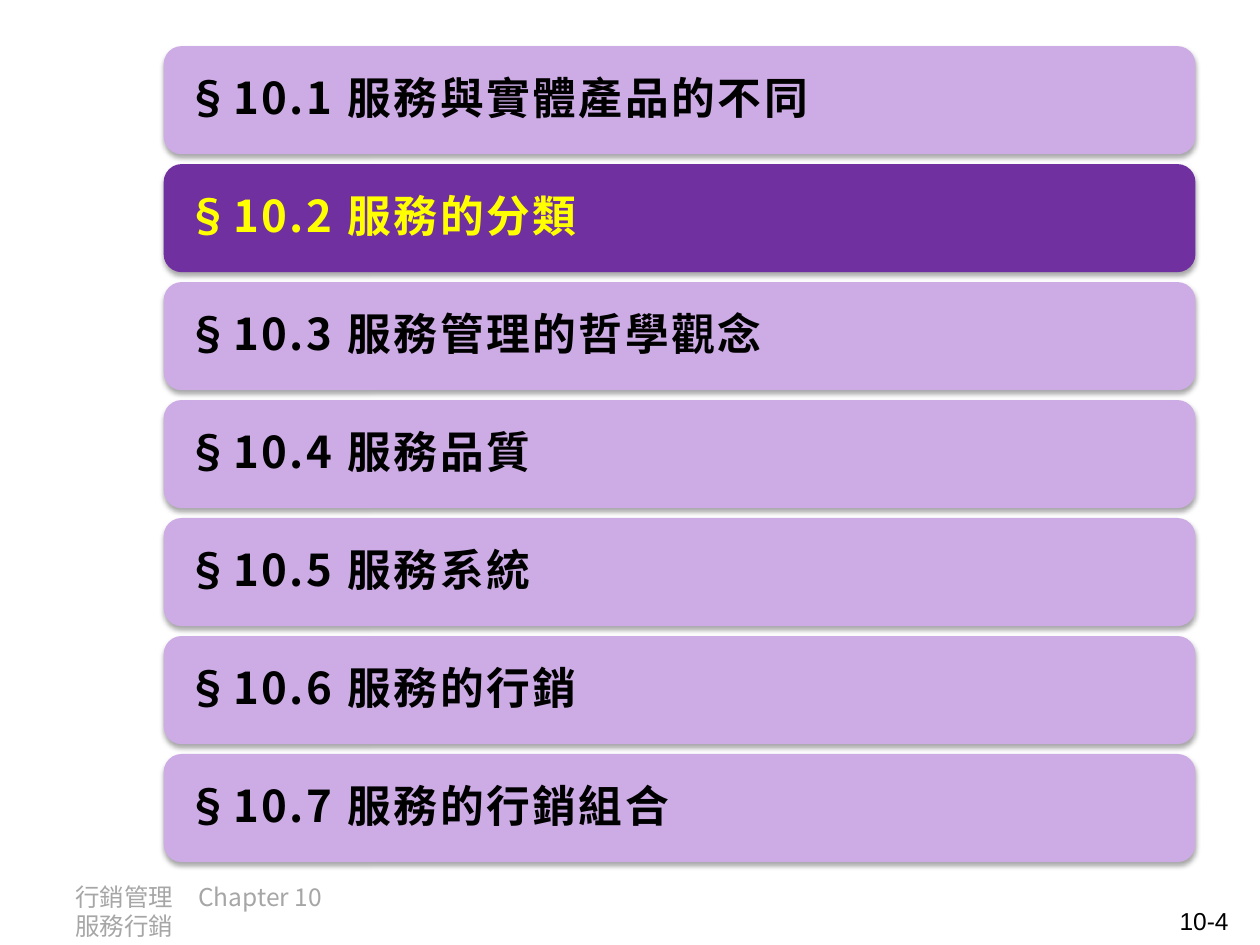
from dataclasses import dataclass

from lxml import etree
from pptx import Presentation
from pptx import util as u
from pptx.dml.color import RGBColor
from pptx.enum import shapes, text
from pptx.oxml import ns


@dataclass(frozen=True)
class Theme:
    bar: str = "CDACE6"
    bar_current: str = "7030A0"
    ink: str = "000000"
    ink_current: str = "FFFF00"
    footer: str = "A6A6A6"
    latin: str = "Arial"
    cjk: str = "Noto Sans CJK SC"
    section_size: float = 25
    footer_size: float = 14


THEME = Theme()
SECTIONS = [
    "服務與實體產品的不同",
    "服務的分類",
    "服務管理的哲學觀念",
    "服務品質",
    "服務系統",
    "服務的行銷",
    "服務的行銷組合",
]
CURRENT = 2


def apply(target, values):
    for name, value in values.items():
        setattr(target, name, value)


def add_span(para, words, latin, size, color, bold=False, spacing=0):
    span = para.add_run()
    span.text = words
    apply(span.font, {"name": latin, "size": u.Pt(size), "bold": bold})
    span.font.color.rgb = RGBColor.from_string(color)
    props = span.font._element
    if spacing:
        props.set("spc", str(int(spacing * 100)))
    east_asian = etree.SubElement(props, ns.qn("a:ea"))
    east_asian.set("typeface", THEME.cjk)


def add_soft_shadow(shape):
    shape.shadow.inherit = False
    effects = shape._element.spPr.find(ns.qn("a:effectLst"))
    shadow = etree.SubElement(effects, ns.qn("a:outerShdw"))
    for name, value in {
        "blurRad": u.Pt(3.1), "dist": u.Pt(1.8), "dir": 90 * 60000, "rotWithShape": 0,
    }.items():
        shadow.set(name, str(int(value)))
    color = etree.SubElement(shadow, ns.qn("a:srgbClr"), val=THEME.ink)
    etree.SubElement(color, ns.qn("a:alpha"), val="35000")


def add_section_bar(page, left, top, width, height, number, title):
    current = number == CURRENT
    bar = page.shapes.add_shape(
        shapes.MSO_SHAPE.ROUNDED_RECTANGLE, left, top, width, height)
    bar.fill.solid()
    bar.fill.fore_color.rgb = RGBColor.from_string(
        THEME.bar_current if current else THEME.bar)
    bar.line.fill.background()
    add_soft_shadow(bar)
    apply(bar.text_frame, {
        "word_wrap": True, "vertical_anchor": text.MSO_ANCHOR.MIDDLE,
        "margin_left": u.Cm(0.36), "margin_right": u.Cm(0.36),
        "margin_top": u.Cm(0.36), "margin_bottom": u.Cm(0.36),
    })
    para = bar.text_frame.paragraphs[0]
    apply(para, {
        "alignment": text.PP_ALIGN.LEFT, "line_spacing": 0.9,
        "space_after": u.Pt(0.35 * THEME.section_size),
    })
    color = THEME.ink_current if current else THEME.ink
    for words, latin in ((f"§10.{number} ", THEME.cjk), (title, THEME.latin)):
        add_span(para, words, latin, THEME.section_size, color, bold=True, spacing=1.5)


def add_section_list(page, left, top, width, height):
    bar_height = u.Cm(2.18)
    pitch = (height - bar_height) / (len(SECTIONS) - 1)
    for index, title in enumerate(SECTIONS):
        add_section_bar(page, left, int(top + index * pitch), width, bar_height,
                        index + 1, title)


def add_footer_text(page, left, top, width, height, words, latin, color, alignment):
    box = page.shapes.add_textbox(left, top, width, height)
    box.text_frame.word_wrap = True
    para = box.text_frame.paragraphs[0]
    para.alignment = alignment
    add_span(para, words, latin, THEME.footer_size, color)


def main():
    deck = Presentation()
    apply(deck, {"slide_width": u.Cm(25.4), "slide_height": u.Cm(19.05)})
    page = deck.slides.add_slide(deck.slide_layouts[6])

    # Footer: chapter name and page number
    add_footer_text(page, u.Cm(1.27), u.Cm(17.65), u.Cm(6.22), u.Cm(1.02),
                    "行銷管理　Chapter 10　服務行銷", THEME.cjk, THEME.footer,
                    text.PP_ALIGN.LEFT)
    add_footer_text(page, u.Cm(19.1), u.Cm(18.14), u.Cm(5.92), u.Cm(0.74),
                    "10-4", THEME.latin, THEME.ink, text.PP_ALIGN.RIGHT)

    # Chapter sections, with the current one highlighted
    add_section_list(page, u.Cm(3.3), u.Cm(0.93), u.Cm(20.8), u.Cm(16.45))

    deck.save("out.pptx")


if __name__ == "__main__":
    main()
